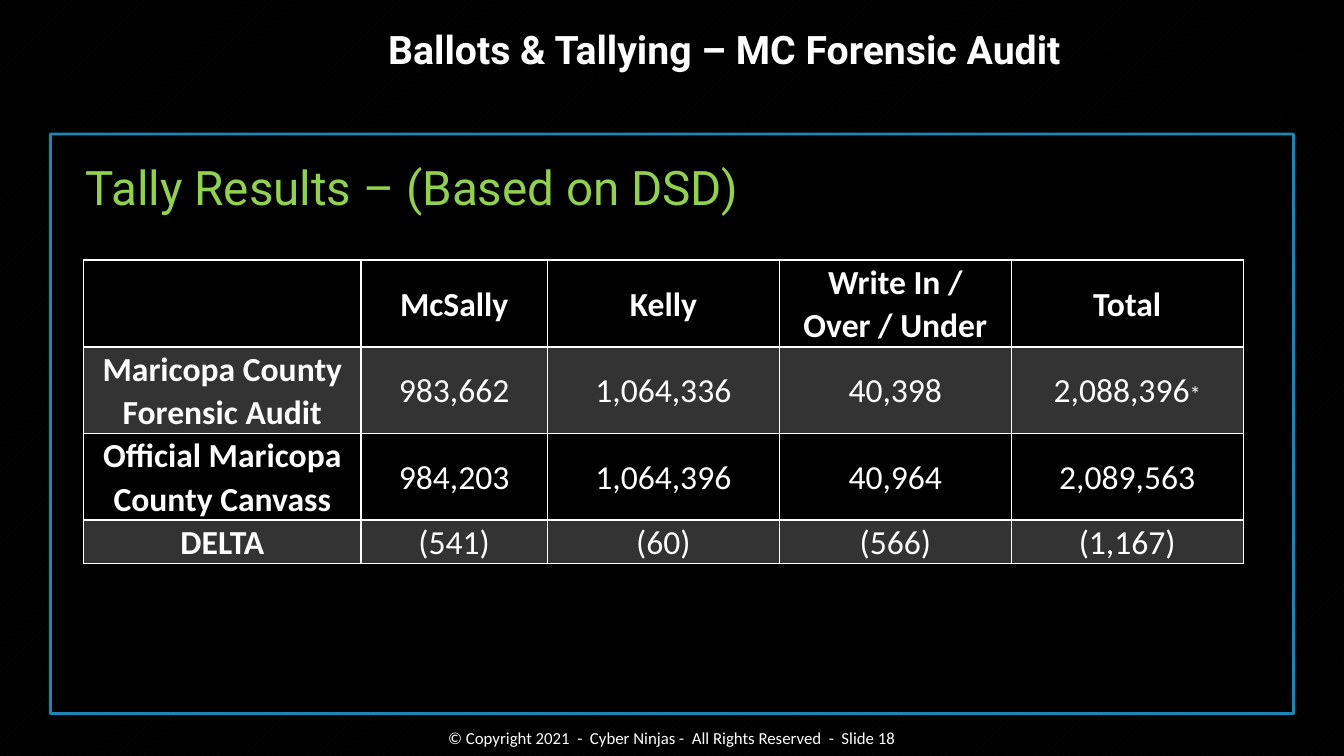
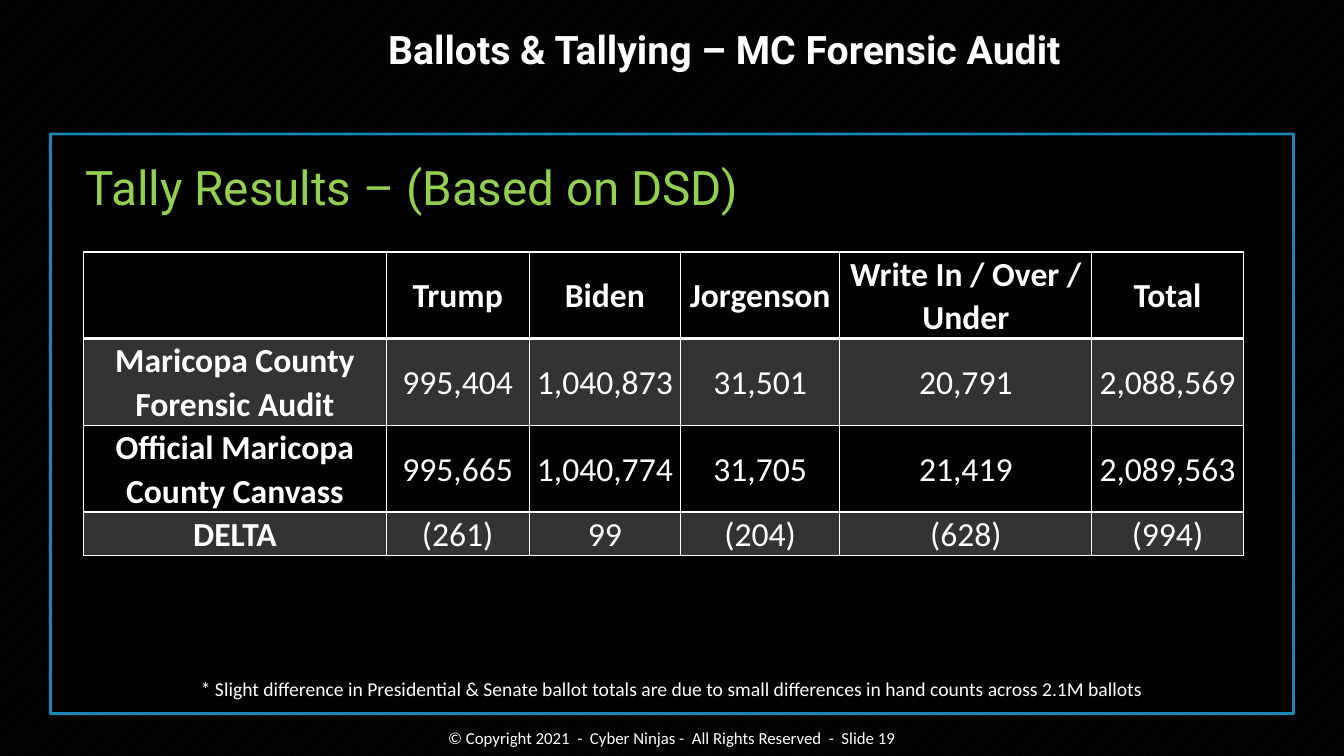
from lxml.etree import SubElement
from pptx import Presentation
from pptx.dml.color import RGBColor
from pptx.enum.dml import MSO_PATTERN
from pptx.enum.shapes import MSO_SHAPE
from pptx.enum.text import MSO_ANCHOR, MSO_AUTO_SIZE, PP_ALIGN
from pptx.oxml.ns import qn
from pptx.util import Inches, Pt

COLORS = {
    "black": "000000",
    "stripe": "0D0D0D",
    "white": "FFFFFF",
    "frame": "25B2F2",
    "title": "92D050",
}
HEADING = "Ballots & Tallying – MC Forensic Audit"
TITLE = "Tally Results – (Based on DSD)"
FOOTNOTE = (
    "* Slight difference in Presidential & Senate ballot totals are due to "
    "small differences in hand counts across 2.1M ballots"
)
ROW_HEIGHTS = [0.86, 0.86, 0.86, 0.43]
FIRST_SLIDE_NUMBER = 18

tallies = [
    {
        "top": 2.58,
        "widths": [2.75, 1.85, 2.3, 2.3, 2.3],
        "rows": [
            ["", "McSally", "Kelly", "Write In / Over / Under", "Total"],
            ["Maricopa County Forensic Audit", "983,662", "1,064,336", "40,398", "2,088,396*"],
            ["Official Maricopa County Canvass", "984,203", "1,064,396", "40,964", "2,089,563"],
            ["DELTA", "(541)", "(60)", "(566)", "(1,167)"],
        ],
        "footnote": None,
    },
    {
        "top": 2.5,
        "widths": [3, 1.42, 1.5, 1.58, 2.5, 1.5],
        "rows": [
            ["", "Trump", "Biden", "Jorgenson", "Write In / Over / Under", "Total"],
            ["Maricopa County Forensic Audit", "995,404", "1,040,873", "31,501", "20,791", "2,088,569"],
            ["Official Maricopa County Canvass", "995,665", "1,040,774", "31,705", "21,419", "2,089,563"],
            ["DELTA", "(261)", "99", "(204)", "(628)", "(994)"],
        ],
        "footnote": FOOTNOTE,
    },
]


def write(paragraph, parts, font="Calibri", color="white", bold=False, align=PP_ALIGN.CENTER, spacing=1.0):
    """Fill a paragraph with (text, size) runs in one style."""
    paragraph.alignment = align
    paragraph.line_spacing = spacing
    paragraph.space_before = Pt(0)
    for text, size in parts:
        run = paragraph.add_run()
        run.text = text
        run.font.name = font
        run.font.size = Pt(size)
        run.font.bold = bold
        run.font.color.rgb = RGBColor.from_string(COLORS[color])


def add_borders(cell, widths):
    """Draw white cell borders; widths maps line tags to points."""
    properties = cell._tc.get_or_add_tcPr()
    for tag, width in widths.items():
        line = SubElement(properties, qn(f"a:{tag}"), w=str(Pt(width)))
        fill = SubElement(line, qn("a:solidFill"))
        SubElement(fill, qn("a:srgbClr"), val=COLORS["white"])


prs = Presentation()
prs.slide_width = Inches(13.33)
prs.slide_height = Inches(7.5)

# Shared background and placeholder places
background = prs.slide_master.background.fill
background.patterned()
background.pattern = MSO_PATTERN.WIDE_UPWARD_DIAGONAL
background.fore_color.rgb = RGBColor.from_string(COLORS["stripe"])
background.back_color.rgb = RGBColor.from_string(COLORS["black"])

layout = prs.slide_layouts[1]
places = [(0.75, 1.58, 11.83, 0.75), (3.75, 0.33, 9.08, 0.66)]
for placeholder, place in zip(layout.placeholders, places):
    placeholder.left, placeholder.top, placeholder.width, placeholder.height = map(Inches, place)
    placeholder.text_frame.vertical_anchor = MSO_ANCHOR.TOP
    placeholder.text_frame.auto_size = MSO_AUTO_SIZE.NONE

slides = [prs.slides.add_slide(layout) for _ in tallies]

# The content frame is built on a slide, then moved to the back of the layout
frame = slides[0].shapes.add_shape(
    MSO_SHAPE.RECTANGLE, Inches(0.5), Inches(1.33), Inches(12.33), Inches(5.75)
)
frame.shadow.inherit = False
frame.fill.solid()
frame.fill.fore_color.rgb = RGBColor.from_string(COLORS["black"])
frame.line.width = Pt(2)
frame.line.color.rgb = RGBColor.from_string(COLORS["frame"])
frame_color = frame.line._ln.find(".//" + qn("a:srgbClr"))
SubElement(frame_color, qn("a:alpha"), val="75000")
layout.shapes.element.insert(2, frame._element)

for number, (slide, tally) in enumerate(zip(slides, tallies), FIRST_SLIDE_NUMBER):
    title = slide.shapes.title.text_frame.paragraphs[0]
    write(title, [(TITLE, 34)], "Roboto", "title", align=PP_ALIGN.LEFT, spacing=0.9)

    heading = slide.placeholders[1].text_frame.paragraphs[0]
    heading_properties = heading._p.get_or_add_pPr()
    heading_properties.set("marL", "0")
    heading_properties.set("indent", "0")
    SubElement(heading_properties, qn("a:buNone"))
    write(heading, [(HEADING, 28)], "Roboto", bold=True, align=PP_ALIGN.LEFT, spacing=0.7)

    copyright_line = f"© Copyright 2021  -  Cyber Ninjas -  All Rights Reserved  -  Slide {number}"
    captions = [(copyright_line, 12, (0, 7.17, 13.33, 0.25))]
    if tally["footnote"]:
        captions.append((tally["footnote"], 14, (0.58, 6.67, 12.17, 0.34)))
    for text, size, place in captions:
        caption = slide.shapes.add_textbox(*map(Inches, place)).text_frame
        caption.word_wrap = True
        write(caption.paragraphs[0], [(text, size)])

    rows, widths = tally["rows"], tally["widths"]
    table = slide.shapes.add_table(
        len(rows), len(widths), Inches(0.83), Inches(tally["top"]),
        Inches(sum(widths)), Inches(sum(ROW_HEIGHTS)),
    ).table
    table.first_row = False
    table.horz_banding = False
    for column, width in zip(table.columns, widths):
        column.width = Inches(width)
    for r, values in enumerate(rows):
        table.rows[r].height = Inches(ROW_HEIGHTS[r])
        for c, value in enumerate(values):
            cell = table.cell(r, c)
            cell.vertical_anchor = MSO_ANCHOR.MIDDLE
            cell.margin_left = cell.margin_right = Inches(0.07)
            cell.margin_top = cell.margin_bottom = 0
            add_borders(cell, {"lnL": 1, "lnR": 1, "lnT": 2 if r == 1 else 1, "lnB": 2 if r == 0 else 1})
            if r % 2:
                cell.fill.solid()
                cell.fill.fore_color.rgb = RGBColor.from_string(COLORS["white"])
                shade = cell._tc.tcPr.find(qn("a:solidFill")).find(qn("a:srgbClr"))
                SubElement(shade, qn("a:alpha"), val="20000")
            else:
                cell.fill.background()
            if value:
                parts = [(value.rstrip("*"), 24)]
                if value.endswith("*"):
                    parts.append(("*", 16))
                write(cell.text_frame.paragraphs[0], parts, bold=r == 0 or c == 0, spacing=1.06)

prs.save("out.pptx")
